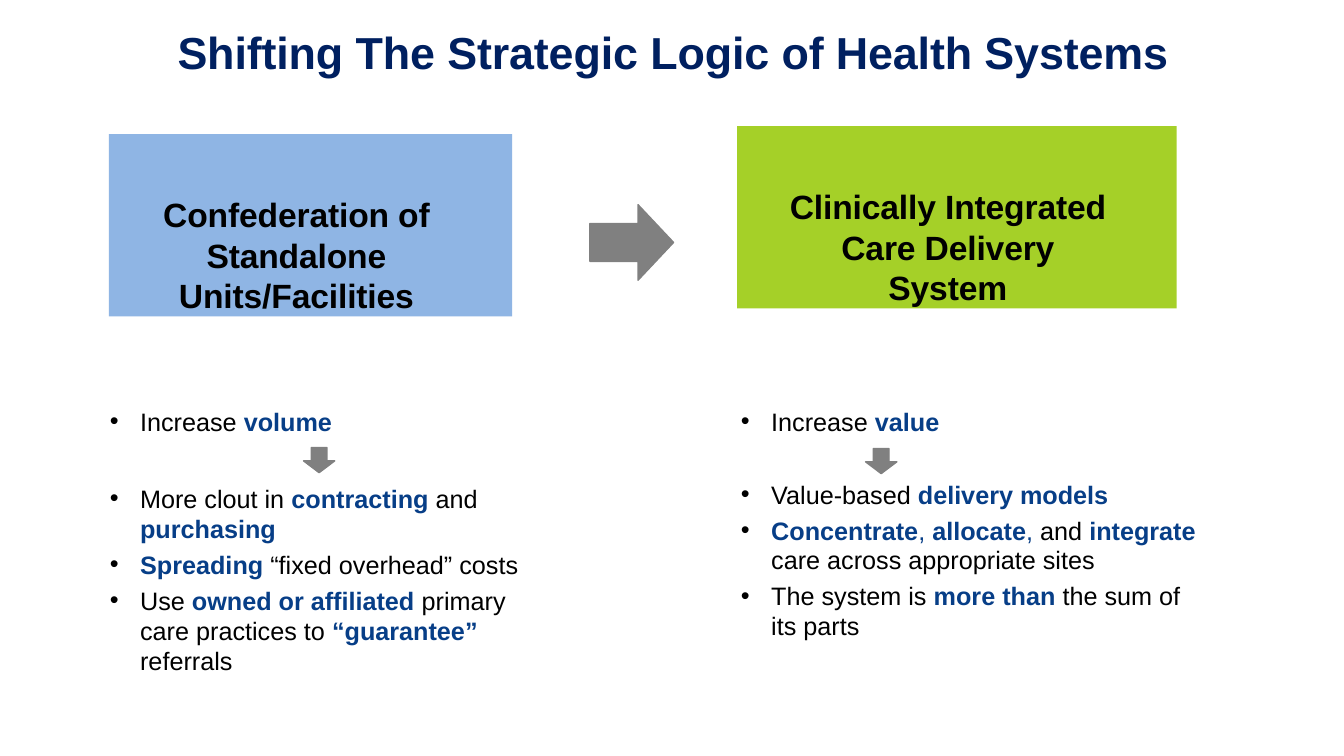
from dataclasses import dataclass

from lxml import etree
from pptx import Presentation
from pptx import util as u
from pptx.dml.color import RGBColor
from pptx.enum import shapes, text
from pptx.oxml import ns

NAVY = RGBColor(0x00, 0x20, 0x60)
ACCENT = RGBColor(0x07, 0x3E, 0x87)
BLACK = RGBColor(0x00, 0x00, 0x00)
GRAY = RGBColor(0x80, 0x80, 0x80)
BLUE = RGBColor(0x8F, 0xB5, 0xE4)
GREEN = RGBColor(0xA5, 0xD0, 0x28)

FONT = "Arial"
SLIDE_WIDTH, SLIDE_HEIGHT = u.Inches(13.33), u.Inches(7.5)
BULLET_GAP = 4.3


def across(percent: float) -> int:
    return int(SLIDE_WIDTH * percent / 100)


def down(percent: float) -> int:
    return int(SLIDE_HEIGHT * percent / 100)


@dataclass(frozen=True)
class Frame:
    """Place on the slide, in percent of its width and height."""
    left: float
    top: float
    width: float
    height: float

    def lengths(self) -> tuple[int, int, int, int]:
        return across(self.left), down(self.top), across(self.width), down(self.height)


@dataclass(frozen=True)
class Span:
    words: str
    color: RGBColor = BLACK
    bold: bool = False


@dataclass(frozen=True)
class Model:
    """One strategic logic: its headline box, bullets and small arrow."""
    fill: RGBColor
    box: Frame
    side_insets: tuple[float, float]
    headline: tuple[str, ...]
    bullets_frame: Frame
    arrow: Frame
    arrow_gap: float
    bullets: tuple[tuple[Span, ...], ...]


def key(words: str) -> Span:
    return Span(words, ACCENT, True)


def add_run(paragraph, span: Span, size: float, spacing: int = 0) -> None:
    run = paragraph.add_run()
    run.text = span.words
    run.font.name, run.font.size = FONT, u.Pt(size)
    run.font.bold, run.font.color.rgb = span.bold, span.color
    if spacing:
        run._r.get_or_add_rPr().set("spc", str(spacing))


def set_up_frame(frame, left: float = 0, top: float = 0, right: float = 0) -> None:
    frame.word_wrap = True
    frame.vertical_anchor = text.MSO_ANCHOR.TOP
    frame.margin_left, frame.margin_right = across(left), across(right)
    frame.margin_top, frame.margin_bottom = down(top), 0


def add_shape(slide, kind: shapes.MSO_SHAPE, place: Frame, fill: RGBColor):
    shape = slide.shapes.add_shape(kind, *place.lengths())
    shape.shadow.inherit = False
    shape.fill.solid()
    shape.fill.fore_color.rgb = fill
    shape.line.fill.background()
    return shape


def add_arrow(slide, kind: shapes.MSO_SHAPE, place: Frame) -> None:
    arrow = add_shape(slide, kind, place, GRAY)
    arrow.line.color.rgb = GRAY
    arrow.line.width = u.Pt(0.96)
    arrow.adjustments[1] = 0.47


def add_bullet_mark(paragraph) -> None:
    properties = paragraph._p.get_or_add_pPr()
    properties.set("marL", str(u.Inches(0.31)))
    properties.set("indent", str(u.Inches(-0.3)))
    color = etree.SubElement(properties, ns.qn("a:buClr"))
    etree.SubElement(color, ns.qn("a:srgbClr"), val=str(BLACK))
    etree.SubElement(properties, ns.qn("a:buFont"), typeface=FONT)
    etree.SubElement(properties, ns.qn("a:buChar"), char="•")


def add_title(slide, words: str) -> None:
    frame = slide.shapes.add_textbox(*Frame(11.33, 3.07, 77.42, 7.33).lengths()).text_frame
    set_up_frame(frame, top=0.27)
    title = frame.paragraphs[0]
    title.alignment = text.PP_ALIGN.CENTER
    title.line_spacing = u.Pt(38)
    add_run(title, Span(words, NAVY, True), 32, -10)


def add_headline(slide, model: Model) -> None:
    box = add_shape(slide, shapes.MSO_SHAPE.RECTANGLE, model.box, model.fill)
    left, right = model.side_insets
    set_up_frame(box.text_frame, left, 7.87, right)
    for index, words in enumerate(model.headline):
        line = box.text_frame.paragraphs[0] if index == 0 else box.text_frame.add_paragraph()
        line.alignment = text.PP_ALIGN.CENTER
        line.line_spacing = u.Pt(29)
        add_run(line, Span(words, BLACK, True), 24, -10)


def add_bullets(slide, model: Model) -> None:
    frame = slide.shapes.add_textbox(*model.bullets_frame.lengths()).text_frame
    set_up_frame(frame, top=0.13)
    gaps = {0: 1, 1: model.arrow_gap}
    for index, spans in enumerate(model.bullets):
        bullet = frame.paragraphs[0] if index == 0 else frame.add_paragraph()
        bullet.line_spacing = u.Pt(21.4)
        bullet.space_before = u.Pt(gaps.get(index, BULLET_GAP))
        add_bullet_mark(bullet)
        for span in spans:
            add_run(bullet, span, 18)


MODELS = (
    Model(
        BLUE, Frame(8.1, 17.73, 30, 24.13), (0, 2.1),
        ("Confederation of Standalone", "Units/Facilities"),
        Frame(8.1, 53.6, 32.26, 36.13), Frame(22.58, 59.2, 2.33, 3.33), 33.6,
        (
            (Span("Increase "), key("volume")),
            (Span("More clout in "), key("contracting "), Span("and "), key("purchasing")),
            (key("Spreading "), Span("“fixed overhead” costs")),
            (Span("Use "), key("owned or affiliated "), Span("primary care practices to "),
             key("“guarantee” "), Span("referrals")),
        ),
    ),
    Model(
        GREEN, Frame(54.84, 16.67, 32.71, 24.13), (1.88, 3.23),
        ("Clinically Integrated Care Delivery", "System"),
        Frame(55.06, 53.6, 34.8, 31.6), Frame(64.4, 59.33, 2.33, 3.33), 30.7,
        (
            (Span("Increase "), key("value")),
            (Span("Value-based "), key("delivery models")),
            (key("Concentrate"), Span(", ", ACCENT), key("allocate"), Span(", ", ACCENT),
             Span("and "), key("integrate "), Span("care across appropriate sites")),
            (Span("The system is "), key("more than "), Span("the sum of its parts")),
        ),
    ),
)


def main() -> None:
    deck = Presentation()
    deck.slide_width, deck.slide_height = SLIDE_WIDTH, SLIDE_HEIGHT
    slide = deck.slides.add_slide(deck.slide_layouts[6])

    # Title and the shift from one model to the other
    add_title(slide, "Shifting The Strategic Logic of Health Systems")
    add_arrow(slide, shapes.MSO_SHAPE.RIGHT_ARROW, Frame(43.89, 27.07, 6.23, 10))

    # The two models
    for model in MODELS:
        add_headline(slide, model)
        add_bullets(slide, model)
        add_arrow(slide, shapes.MSO_SHAPE.DOWN_ARROW, model.arrow)

    deck.save("out.pptx")


if __name__ == "__main__":
    main()
